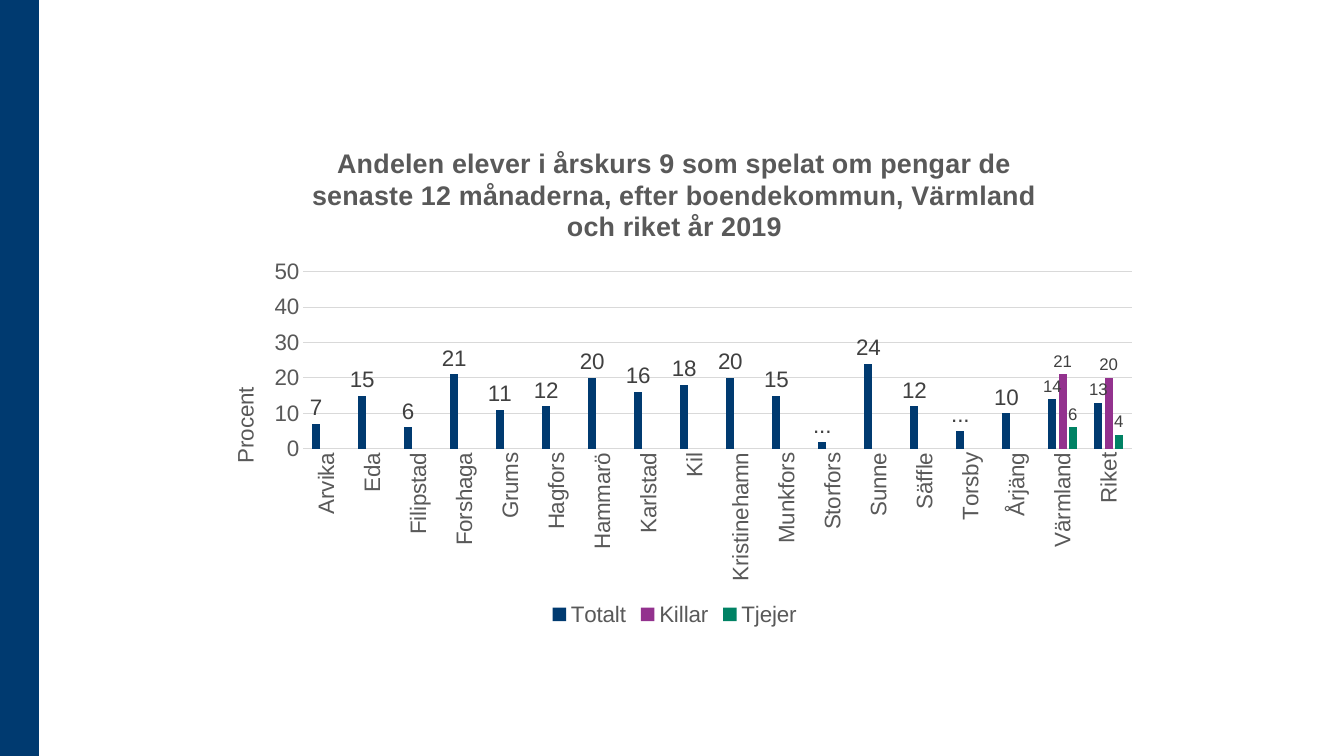
from lxml import etree
from pptx import Presentation
from pptx import util as u
from pptx.chart import data as chart_data
from pptx.dml import color
from pptx.enum import chart as chart_enum
from pptx.enum import shapes
from pptx.oxml import ns

PX = 9525
COLORS = {
    "navy": "003A70",
    "purple": "93328E",
    "green": "008264",
    "grid": "D9D9D9",
    "axis_text": "595959",
    "label_text": "404040",
}
AXIS_FONT = {"name": "Arial", "size": u.Pt(16), "bold": False}
TITLE_FONT = {"name": "Arial", "size": u.Pt(19.2), "bold": True}
LABEL_FONT = {"name": "Arial", "size": u.Pt(16), "bold": False}
SMALL_LABEL_FONT = {"name": "Arial", "size": u.Pt(12), "bold": False}

TITLE = ("Andelen elever i årskurs 9 som spelat om pengar de senaste 12 månaderna, "
         "efter boendekommun, Värmland och riket år 2019")
TOTALS = {
    "Arvika": 7, "Eda": 15, "Filipstad": 6, "Forshaga": 21, "Grums": 11,
    "Hagfors": 12, "Hammarö": 20, "Karlstad": 16, "Kil": 18,
    "Kristinehamn": 20, "Munkfors": 15, "Storfors": 2, "Sunne": 24,
    "Säffle": 12, "Torsby": 5, "Årjäng": 10, "Värmland": 14, "Riket": 13,
}
BY_GENDER = {
    "Killar": {"Värmland": 21, "Riket": 20},
    "Tjejer": {"Värmland": 6, "Riket": 4},
}
HIDDEN_VALUES = ("Storfors", "Torsby")
REGIONS = ("Värmland", "Riket")
SERIES_COLORS = ("navy", "purple", "green")
OUTSIDE_END = chart_enum.XL_LABEL_POSITION.OUTSIDE_END


def rgb(name):
    return color.RGBColor.from_string(COLORS[name])


def set_values(target, values):
    for name, value in values.items():
        setattr(target, name, value)


def format_font(font, values, color_name):
    set_values(font, values)
    font.color.rgb = rgb(color_name)


def set_fill(fill, color_name):
    fill.solid()
    fill.fore_color.rgb = rgb(color_name)


def write_text(frame, words, values, color_name):
    run = frame.paragraphs[0].add_run()
    run.text = words
    format_font(run.font, values, color_name)


def set_layout(parent, index, places):
    for old_layout in parent.findall(ns.qn("c:layout")):
        parent.remove(old_layout)
    layout = etree.Element(ns.qn("c:layout"))
    manual = etree.SubElement(layout, ns.qn("c:manualLayout"))
    for name, value in places.items():
        etree.SubElement(manual, ns.qn("c:" + name)).set("val", str(value))
    parent.insert(index, layout)


def turn_upward(body):
    body.set("rot", "-5400000")
    body.set("vert", "horz")


def draw_side_bar(slide, left, top, width, height):
    bar = slide.shapes.add_shape(
        shapes.MSO_SHAPE.RECTANGLE, left * PX, top * PX, width * PX, height * PX)
    bar.shadow.inherit = False
    set_fill(bar.fill, "navy")
    bar.line.fill.background()


def format_axes(chart):
    category_axis, value_axis = chart.category_axis, chart.value_axis
    for axis in (category_axis, value_axis):
        set_values(axis, {"major_tick_mark": chart_enum.XL_TICK_MARK.NONE,
                          "minor_tick_mark": chart_enum.XL_TICK_MARK.NONE})
        format_font(axis.tick_labels.font, AXIS_FONT, "axis_text")
    turn_upward(category_axis._element.xpath("c:txPr/a:bodyPr")[0])

    set_values(value_axis, {"minimum_scale": 0, "maximum_scale": 50,
                            "major_unit": 10, "has_major_gridlines": True})
    set_values(value_axis.tick_labels, {"number_format": "0",
                                        "number_format_is_linked": False})
    value_axis.format.line.fill.background()
    for line in (category_axis.format.line, value_axis.major_gridlines.format.line):
        line.color.rgb = rgb("grid")
        line.width = u.Pt(0.75)

    axis_title = value_axis.axis_title
    write_text(axis_title.text_frame, "Procent", AXIS_FONT, "axis_text")
    turn_upward(axis_title._element.xpath("c:tx/c:rich/a:bodyPr")[0])
    set_layout(axis_title._element, 1,
               {"xMode": "edge", "yMode": "edge", "x": 0.03, "y": 0.51})


def format_series(series, color_name, label_font):
    series.invert_if_negative = False
    set_fill(series.format.fill, color_name)
    labels = series.data_labels
    set_values(labels, {"show_value": True, "position": OUTSIDE_END,
                        "number_format": "0", "number_format_is_linked": False})
    format_font(labels.font, label_font, "label_text")


def format_point_labels(series, names):
    for name in HIDDEN_VALUES:
        label = series.points[names.index(name)].data_label
        write_text(label.text_frame, "...", LABEL_FONT, "label_text")
        label.position = OUTSIDE_END
    for name in REGIONS:
        label = series.points[names.index(name)].data_label
        format_font(label.font, SMALL_LABEL_FONT, "label_text")
        label.position = OUTSIDE_END


def draw_chart(slide, left, top, width, height):
    names = list(TOTALS)
    data = chart_data.CategoryChartData()
    data.categories = names
    data.add_series("Totalt", TOTALS.values())
    for gender, shares in BY_GENDER.items():
        data.add_series(gender, [shares.get(name) for name in names])
    chart = slide.shapes.add_chart(
        chart_enum.XL_CHART_TYPE.COLUMN_CLUSTERED,
        left * PX, top * PX, width * PX, height * PX, data).chart
    format_font(chart.font, AXIS_FONT, "axis_text")

    chart.has_title = True
    write_text(chart.chart_title.text_frame, TITLE, TITLE_FONT, "axis_text")
    chart.has_legend = True
    set_values(chart.legend, {"position": chart_enum.XL_LEGEND_POSITION.BOTTOM,
                              "include_in_layout": False})
    format_font(chart.legend.font, AXIS_FONT, "axis_text")

    plot = chart.plots[0]
    set_values(plot, {"gap_width": 219, "overlap": -27, "vary_by_categories": False})
    set_layout(plot._element.getparent(), 0,
               {"layoutTarget": "inner", "xMode": "edge", "yMode": "edge",
                "x": 0.11, "y": 0.29, "w": 0.87, "h": 0.35})
    format_axes(chart)
    label_fonts = (LABEL_FONT, SMALL_LABEL_FONT, SMALL_LABEL_FONT)
    for series, color_name, label_font in zip(plot.series, SERIES_COLORS, label_fonts):
        format_series(series, color_name, label_font)
    format_point_labels(plot.series[0], names)


def main():
    presentation = Presentation()
    set_values(presentation, {"slide_width": 1280 * PX, "slide_height": 720 * PX})
    slide = presentation.slides.add_slide(presentation.slide_layouts[6])
    draw_side_bar(slide, 0, 0, 37, 720)
    draw_chart(slide, 189, 119, 907, 482)
    presentation.save("out.pptx")


if __name__ == "__main__":
    main()
